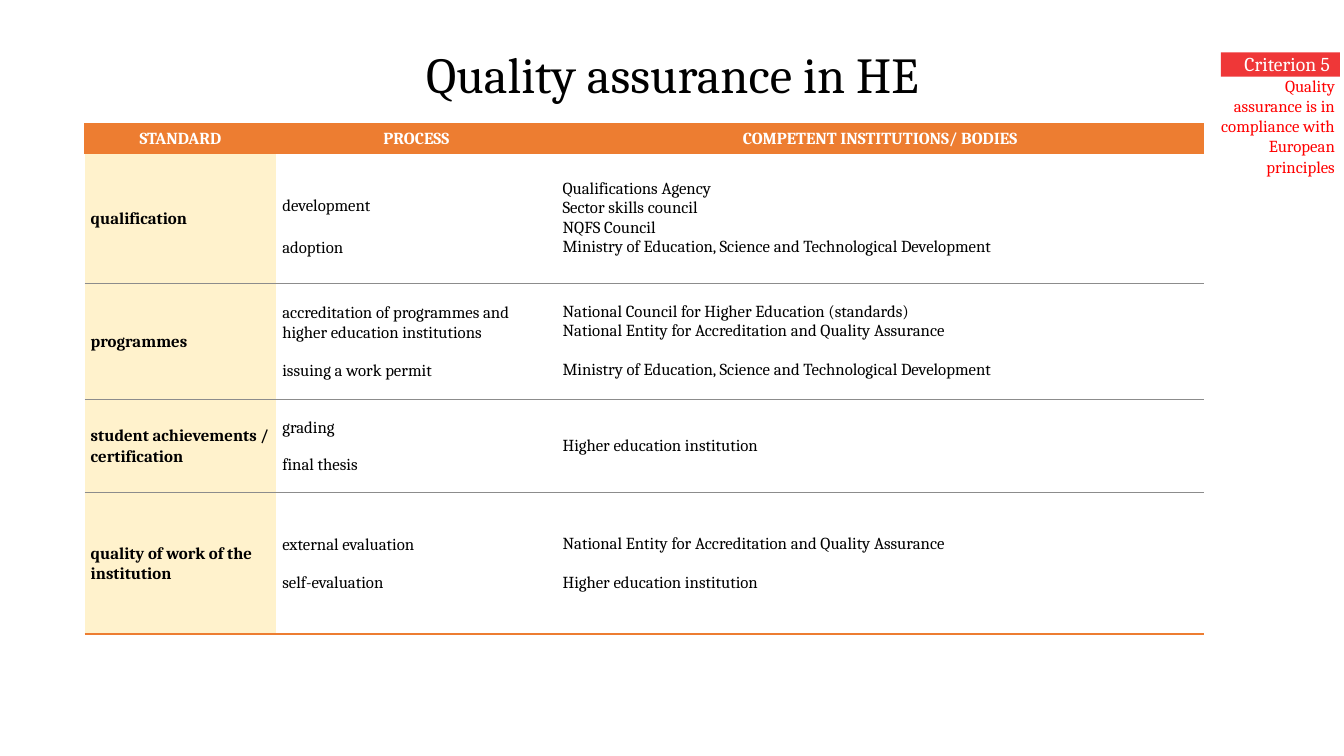
"""Build the slide on quality assurance in higher education."""
from lxml import etree
from pptx import Presentation, util as u
from pptx.dml.color import RGBColor
from pptx.enum import shapes, text
from pptx.oxml import ns

TITLE = "Quality assurance in HE"
TAG = "Criterion 5"
NOTE = "Quality assurance is in compliance with European principles"
HEADS = ["STANDARD", "PROCESS", "COMPETENT INSTITUTIONS/ BODIES"]
MINISTRY = "Ministry of Education, Science and Technological Development"
ENTITY = "National Entity for Accreditation and Quality Assurance"
SCHOOL = "Higher education institution"
BODY = [
    (["qualification"], ["development", "adoption"],
     ["Qualifications Agency", "Sector skills council", "NQFS Council", MINISTRY]),
    (["programmes"],
     ["accreditation of programmes and higher education institutions",
      "issuing a work permit"],
     ["National Council for Higher Education (standards)", ENTITY, MINISTRY]),
    (["student achievements / certification"], ["grading", "final thesis"], [SCHOOL]),
    (["quality of work of the institution"],
     ["external evaluation", "self-evaluation"], [ENTITY, SCHOOL]),
]
GAPS = [(0, 15, 0), (0, 12, 14), (0, 12, 0), (0, 12, 14)]
COLS = [1.9, 2.78, 6.42]
ROWS = [0.29, 1.29, 1.15, 0.93, 1.4]
SIZE = (13.33, 7.5)

THEME = {
    "font": "Cambria", "title": 36, "tag": 14, "body": 12,
    "black": "000000", "white": "FFFFFF", "orange": "ED7D31",
    "cream": "FFF2CC", "grey": "8C8C8C", "red": "EF3738", "note": "FF0000",
}
ALIGN = text.PP_ALIGN
ANCHOR = text.MSO_ANCHOR
PLAIN = "{2D5ABB26-0587-4C30-8999-92F81FD0307C}"


def tint(name):
    return RGBColor.from_string(THEME[name])


def apply(item, **form):
    for key, val in form.items():
        setattr(item, key, val)


def write(frame, lines, size, color, align, bold=False, space=1.0, gap=0):
    """Fill a frame with lines, setting the last one apart by a gap."""
    for num, line in enumerate(lines):
        para = frame.add_paragraph() if num else frame.paragraphs[0]
        para.text = line
        last = num and num == len(lines) - 1
        apply(para, alignment=align, line_spacing=space,
              space_before=u.Pt(gap if last else 0), space_after=u.Pt(0))
        apply(para.font, name=THEME["font"], size=u.Pt(THEME[size]), bold=bold)
        para.font.color.rgb = tint(color)


def inset(item, left, top, right, low):
    apply(item, margin_left=u.Inches(left), margin_top=u.Inches(top),
          margin_right=u.Inches(right), margin_bottom=u.Inches(low))


def place(item, *box):
    for key, val in zip(("left", "top", "width", "height"), box):
        setattr(item, key, u.Inches(val))


def edge(cell, sides, color):
    """Draw one-point lines on the sides of a cell."""
    props = cell._tc.get_or_add_tcPr()
    for side in sides:
        line = etree.SubElement(props, ns.qn("a:ln" + side), w=str(u.Pt(1)))
        fill = etree.SubElement(line, ns.qn("a:solidFill"))
        etree.SubElement(fill, ns.qn("a:srgbClr"), val=THEME[color])


def paint(item, color):
    item.fill.solid()
    item.fill.fore_color.rgb = tint(color)


def add_grid(slide):
    frame = slide.shapes.add_table(
        len(ROWS), len(COLS), u.Inches(0.84), u.Inches(1.23),
        u.Inches(sum(COLS)), u.Inches(sum(ROWS)))
    grid = frame.table
    apply(grid, first_row=False, horz_banding=False)
    grid._tbl.tblPr.find(ns.qn("a:tableStyleId")).text = PLAIN
    for col, wide in zip(grid.columns, COLS):
        col.width = u.Inches(wide)
    for row, high in zip(grid.rows, ROWS):
        row.height = u.Inches(high)

    for col, head in enumerate(HEADS):
        cell = grid.cell(0, col)
        inset(cell, 0.06, 0, 0.06, 0)
        cell.vertical_anchor = ANCHOR.MIDDLE
        edge(cell, {0: "LTB", 1: "TB", 2: "RTB"}[col], "orange")
        paint(cell, "orange")
        write(cell.text_frame, [head], "body", "white", ALIGN.CENTER, True, 1.07)

    for row, (cells, gaps) in enumerate(zip(BODY, GAPS), 1):
        for col, (lines, gap) in enumerate(zip(cells, gaps)):
            cell = grid.cell(row, col)
            high = (row, col) == (1, 1)
            inset(cell, 0.06, 0.42 if high else 0, 0.06, 0)
            cell.vertical_anchor = ANCHOR.TOP if high else ANCHOR.MIDDLE
            edge(cell, "B", "orange" if row == len(BODY) else "grey")
            paint(cell, "white" if col else "cream")
            write(cell.text_frame, lines, "body", "black",
                  ALIGN.JUSTIFY if col == 2 else ALIGN.LEFT,
                  col == 0, 1.0 if col == 2 else 1.07, gap)


def add_mark(slide):
    tag = slide.shapes.add_shape(shapes.MSO_SHAPE.RECTANGLE, 0, 0, 0, 0)
    place(tag, 12.11, 0.52, 1.18, 0.24)
    tag.shadow.inherit = False
    paint(tag, "red")
    tag.line.fill.background()
    note = slide.shapes.add_textbox(0, 0, 0, 0)
    place(note, 11.96, 0.75, 1.32, 1.01)
    for item, words, size, color, right in (
            (tag, TAG, "tag", "white", 0.1), (note, NOTE, "body", "note", 0.04)):
        frame = item.text_frame
        apply(frame, word_wrap=True, vertical_anchor=ANCHOR.TOP,
              auto_size=text.MSO_AUTO_SIZE.NONE)
        inset(frame, 0.1, 0, right, 0)
        write(frame, [words], size, color, ALIGN.RIGHT)


def main():
    deck = Presentation()
    apply(deck, slide_width=u.Inches(SIZE[0]), slide_height=u.Inches(SIZE[1]))
    slide = deck.slides.add_slide(deck.slide_layouts[5])
    add_mark(slide)
    title = slide.shapes.title
    place(title, 0.92, 0.4, 11.5, 0.73)
    apply(title.text_frame, vertical_anchor=ANCHOR.MIDDLE, word_wrap=True,
          auto_size=text.MSO_AUTO_SIZE.NONE)
    write(title.text_frame, [TITLE], "title", "black", ALIGN.CENTER, space=0.9)
    add_grid(slide)
    deck.save("out.pptx")


if __name__ == "__main__":
    main()
